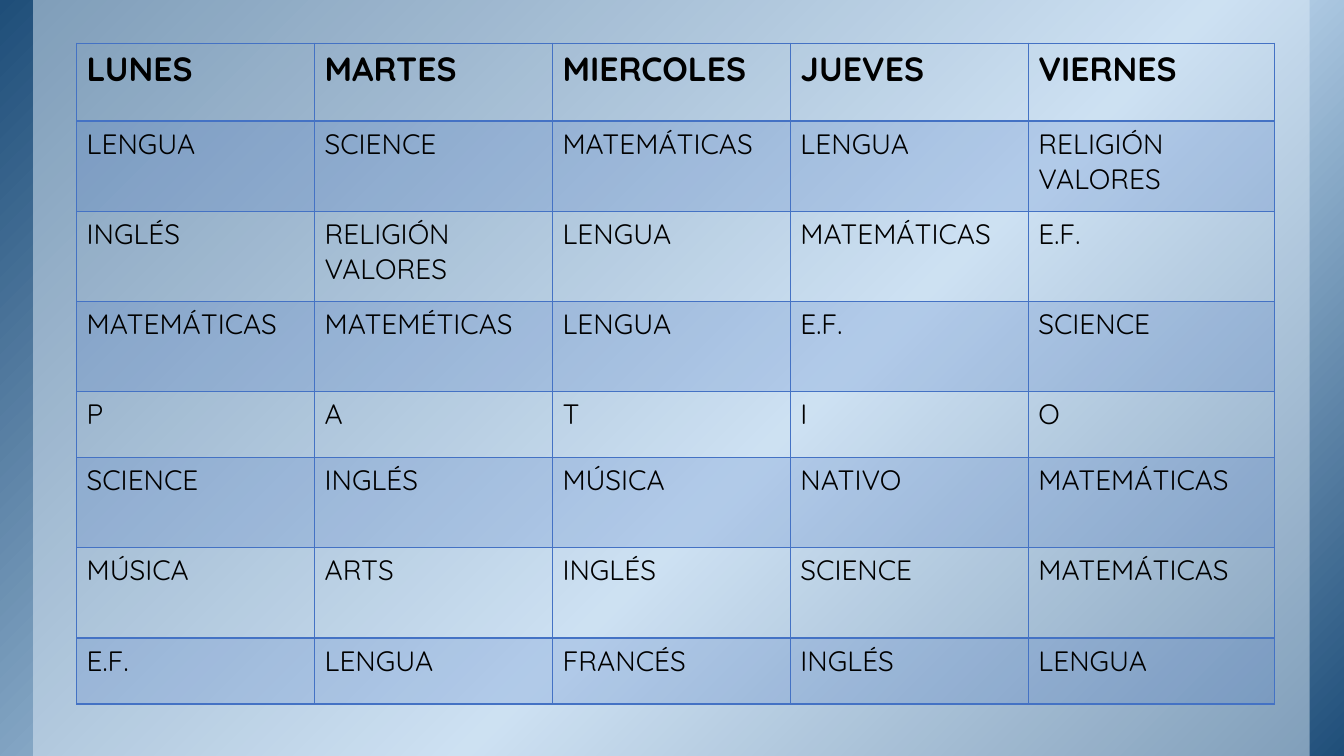
import copy

import pptx
import pptx.dml.color
import pptx.enum.shapes
import pptx.oxml
import pptx.oxml.ns
import pptx.util

Inches = pptx.util.Inches
RGBColor = pptx.dml.color.RGBColor
qn = pptx.oxml.ns.qn

TIMETABLE = [
    ["LUNES", "MARTES", "MIERCOLES", "JUEVES", "VIERNES"],
    ["LENGUA", "SCIENCE", "MATEMÁTICAS", "LENGUA", "RELIGIÓN\nVALORES"],
    ["INGLÉS", "RELIGIÓN\nVALORES", "LENGUA", "MATEMÁTICAS", "E.F."],
    ["MATEMÁTICAS", "MATEMÉTICAS", "LENGUA", "E.F.", "SCIENCE"],
    ["P", "A", "T", "I", "O"],
    ["SCIENCE", "INGLÉS", "MÚSICA", "NATIVO", "MATEMÁTICAS"],
    ["MÚSICA", "ARTS", "INGLÉS", "SCIENCE", "MATEMÁTICAS"],
    ["E.F.", "LENGUA", "FRANCÉS", "INGLÉS", "LENGUA"],
]
HEADER_HEIGHT, LESSON_HEIGHT, SHORT_HEIGHT = 0.77, 0.895, 0.655
ROW_HEIGHTS = [HEADER_HEIGHT, *[LESSON_HEIGHT] * 3, SHORT_HEIGHT, *[LESSON_HEIGHT] * 2, SHORT_HEIGHT]
COLUMN_WIDTHS = [2.36] * 4 + [2.44]
TABLE_LEFT, TABLE_TOP = 0.76, 0.43
SLIDE_WIDTH, SLIDE_HEIGHT = 13.33, 7.5
PANEL_LEFT, PANEL_WIDTH = 0.33, 12.66

BLACK = RGBColor(0x00, 0x00, 0x00)
NAVY = RGBColor(0x1F, 0x4E, 0x79)
SKY = RGBColor(0xBD, 0xD7, 0xEE)
PALE = RGBColor(0xDE, 0xEB, 0xF7)
BLUE = RGBColor(0x44, 0x72, 0xC4)
GRADIENT = [(0, NAVY), (0.58, SKY), (1, NAVY)]

HEADER_FONT = {"name": "Quicksand", "size": pptx.util.Pt(24), "bold": True}
LESSON_FONT = {"name": "Quicksand", "size": pptx.util.Pt(20), "bold": False}


def add_rectangle(slide, left, width):
    """Add a full-height rectangle without line or shadow."""
    box = slide.shapes.add_shape(
        pptx.enum.shapes.MSO_SHAPE.RECTANGLE,
        Inches(left), 0, Inches(width), Inches(SLIDE_HEIGHT))
    box.shadow.inherit = False
    box.line.fill.background()
    return box


def fill_gradient(box):
    box.fill.gradient()
    box.fill.gradient_angle = 315
    stop_list = box._element.spPr.find(".//" + qn("a:gsLst"))
    stop_list.append(copy.deepcopy(stop_list[0]))
    for stop, (position, color) in zip(box.fill.gradient_stops, GRADIENT):
        stop.position = position
        stop.color.rgb = color


def fill_translucent(fill, color, opacity, element):
    fill.solid()
    fill.fore_color.rgb = color
    tint = element.find(qn("a:solidFill")).find(qn("a:srgbClr"))
    pptx.oxml.ns  # namespace map is loaded with the package
    tint.append(pptx.oxml.parse_xml(
        f'<a:alpha {pptx.oxml.ns.nsdecls("a")} val="{opacity * 1000}"/>'))


def set_borders(properties, widths):
    """Insert left, right, top and bottom lines ahead of the cell's fill."""
    for index, (side, width) in enumerate(widths.items()):
        properties.insert(index, pptx.oxml.parse_xml(
            f'<a:ln{side} {pptx.oxml.ns.nsdecls("a")} w="{pptx.util.Pt(width)}">'
            f'<a:solidFill><a:srgbClr val="{BLUE}"/></a:solidFill></a:ln{side}>'))


def format_cell(cell, text, row):
    cell.text = text
    for para in cell.text_frame.paragraphs:
        for span in para.runs:
            for name, value in (LESSON_FONT if row else HEADER_FONT).items():
                setattr(span.font, name, value)
            span.font.color.rgb = BLACK
    properties = cell._tc.get_or_add_tcPr()
    if row % 2:
        fill_translucent(cell.fill, BLUE, 20, properties)
    else:
        cell.fill.background()
    set_borders(properties, {"L": 1, "R": 1, "T": 2 if row == 1 else 1, "B": 1 if row else 2})


def add_timetable(slide):
    table = slide.shapes.add_table(
        len(TIMETABLE), len(COLUMN_WIDTHS), Inches(TABLE_LEFT), Inches(TABLE_TOP),
        Inches(sum(COLUMN_WIDTHS)), Inches(sum(ROW_HEIGHTS))).table
    table.horz_banding = False
    for column, width in zip(table.columns, COLUMN_WIDTHS):
        column.width = Inches(width)
    for row, (height, texts) in enumerate(zip(ROW_HEIGHTS, TIMETABLE)):
        table.rows[row].height = Inches(height)
        for column, text in enumerate(texts):
            format_cell(table.cell(row, column), text, row)


def main():
    deck = pptx.Presentation()
    deck.slide_width, deck.slide_height = Inches(SLIDE_WIDTH), Inches(SLIDE_HEIGHT)
    slide = deck.slides.add_slide(deck.slide_layouts[6])
    fill_gradient(add_rectangle(slide, 0, SLIDE_WIDTH))
    panel = add_rectangle(slide, PANEL_LEFT, PANEL_WIDTH)
    fill_translucent(panel.fill, PALE, 50, panel._element.spPr)
    add_timetable(slide)
    deck.save("out.pptx")


if __name__ == "__main__":
    main()
